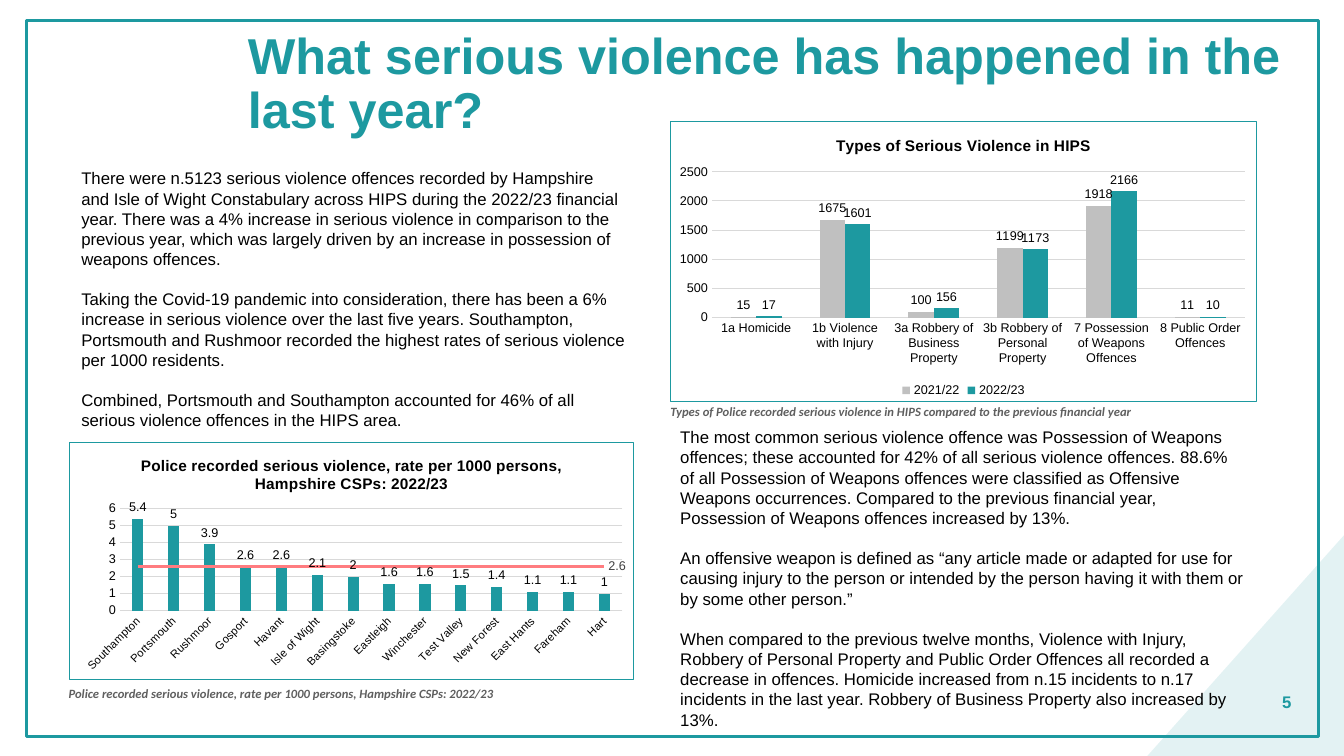
"""Build the serious violence slide with two charts and their commentary."""
from dataclasses import dataclass

from pptx import Presentation, oxml
from pptx import util as u
from pptx.chart import data as cd
from pptx.dml import color
from pptx.enum import chart as ce, shapes, text
from pptx.oxml import ns

COLORS = {"teal": "1D99A0", "black": "000000", "white": "FFFFFF", "grey": "C0C0C0",
          "caption": "5F5F5F", "grid": "D9D9D9", "pink": "FF7C80", "label": "404040"}

@dataclass
class Style:
    size: float
    color: str = "black"
    name: str = "Arial"
    bold: bool = False
    italic: bool = False

@dataclass
class TextBlock:
    frame: tuple[float, float, float, float]
    paragraphs: list[str]
    style: Style
    inset: tuple[float, float] = (7.2, 3.6)
    align: text.PP_ALIGN = text.PP_ALIGN.LEFT
    anchor: text.MSO_ANCHOR = text.MSO_ANCHOR.TOP

@dataclass
class ChartBlock:
    frame: tuple[float, float, float, float]
    title: str
    categories: list[str]
    series: dict[str, list[float]]
    colors: list[str]
    plot_area: tuple[float, float, float, float]
    top: float
    step: float
    gap: int
    overlap: int
    category_size: float

BODY, LABEL = Style(12), Style(9)
CAPTION = Style(9, "caption", "Calibri", True, True)

TEXTS = [
    TextBlock((51, 116.5, 404, 254), [
        "There were n.5123 serious violence offences recorded by Hampshire and Isle of Wight Constabulary across HIPS during the 2022/23 financial year. There was a 4% increase in serious violence in comparison to the previous year, which was largely driven by an increase in possession of weapons offences.",
        "Taking the Covid-19 pandemic into consideration, there has been a 6% increase in serious violence over the last five years. Southampton, Portsmouth and Rushmoor recorded the highest rates of serious violence per 1000 residents.",
        "Combined, Portsmouth and Southampton accounted for 46% of all serious violence offences in the HIPS area."], BODY),
    TextBlock((478.8, 301.5, 419, 269), [
        "The most common serious violence offence was Possession of Weapons offences; these accounted for 42% of all serious violence offences. 88.6% of all Possession of Weapons offences were classified as Offensive Weapons occurrences. Compared to the previous financial year, Possession of Weapons offences increased by 13%.",
        "An offensive weapon is defined as “any article made or adapted for use for causing injury to the person or intended by the person having it with them or by some other person.”",
        "When compared to the previous twelve months, Violence with Injury, Robbery of Personal Property and Public Order Offences all recorded a decrease in offences. Homicide increased from n.15 incidents to n.17 incidents in the last year. Robbery of Business Property also increased by 13%."], BODY),
    TextBlock((49, 489.6, 319, 11), [
        "Police recorded serious violence, rate per 1000 persons, Hampshire CSPs: 2022/23"], CAPTION, (0, 0)),
    TextBlock((478.8, 288.7, 335.5, 11), [
        "Types of Police recorded serious violence in HIPS compared to the previous financial year"], CAPTION, (0, 0)),
    TextBlock((905.8, 486.7, 23.8, 28.8), ["5"], Style(12, "teal", bold=True),
              align=text.PP_ALIGN.RIGHT, anchor=text.MSO_ANCHOR.MIDDLE),
]

RATES = ChartBlock(
    (49, 315.4, 404, 170.6),
    "Police recorded serious violence, rate per 1000 persons, Hampshire CSPs: 2022/23",
    ["Southampton", "Portsmouth", "Rushmoor", "Gosport", "Havant", "Isle of Wight", "Basingstoke",
     "Eastleigh", "Winchester", "Test Valley", "New Forest", "East Hants", "Fareham", "Hart"],
    {"Series 1": [5.4, 5, 3.9, 2.6, 2.6, 2.1, 2, 1.6, 1.6, 1.5, 1.4, 1.1, 1.1, 1], "Series 2": [2.6] * 14},
    ["teal", "pink"], (0.09, 0.28, 0.89, 0.43), 6, 1, 219, -27, 8)

TYPES = ChartBlock(
    (478.8, 86.4, 419, 200.9), "Types of Serious Violence in HIPS",
    ["1a Homicide", "1b Violence with Injury", "3a Robbery of Business Property",
     "3b Robbery of Personal Property", "7 Possession of Weapons Offences", "8 Public Order Offences"],
    {"2021/22": [15, 1675, 100, 1199, 1918, 11], "2022/23": [17, 1601, 156, 1173, 2166, 10]},
    ["grey", "teal"], (0.07, 0.18, 0.91, 0.52), 2500, 500, 150, 0, 9)

def points(values: tuple) -> list:
    return [u.Pt(v) for v in values]

def set_font(font, style: Style) -> None:
    font.size, font.name = u.Pt(style.size), style.name
    font.bold, font.italic = style.bold, style.italic
    font.color.rgb = color.RGBColor.from_string(COLORS[style.color])

def set_fill(fill, name: str) -> None:
    fill.solid()
    fill.fore_color.rgb = color.RGBColor.from_string(COLORS[name])

def set_line(line, name: str, width: float) -> None:
    line.width = u.Pt(width)
    set_fill(line.fill, name)

def add_frame(slide) -> None:
    border = slide.shapes.add_shape(shapes.MSO_SHAPE.RECTANGLE, *points((18.7, 14.4, 923, 512)))
    border.fill.background()
    set_line(border.line, "teal", 2.25)
    corner = slide.shapes.add_shape(shapes.MSO_SHAPE.RIGHT_TRIANGLE, *points((810.9, 390.9, 157.7, 140.5)))
    corner.rotation = 270
    set_fill(corner.fill, "teal")
    tint = next(corner._element.spPr.iter(ns.qn("a:srgbClr")))
    tint.append(oxml.parse_xml(f'<a:alpha {ns.nsdecls("a")} val="12000"/>'))
    corner.line.fill.background()
    border.shadow.inherit = corner.shadow.inherit = False

def add_title(slide) -> None:
    sp = slide.shapes.title
    sp.left, sp.top, sp.width, sp.height = points((169.9, 8.6, 759.6, 104.4))
    tf = sp.text_frame
    tf.text = "What serious violence has happened in the last year?"
    tf.auto_size, tf.vertical_anchor = text.MSO_AUTO_SIZE.NONE, text.MSO_ANCHOR.MIDDLE
    p = tf.paragraphs[0]
    p.alignment, p.line_spacing = text.PP_ALIGN.LEFT, 0.9
    set_font(p.font, Style(36, "teal", bold=True))

def add_text(slide, block: TextBlock) -> None:
    tf = slide.shapes.add_textbox(*points(block.frame)).text_frame
    tf.word_wrap, tf.vertical_anchor = True, block.anchor
    tf.margin_left = tf.margin_right = u.Pt(block.inset[0])
    tf.margin_top = tf.margin_bottom = u.Pt(block.inset[1])
    for i, words in enumerate(block.paragraphs):
        p = tf.add_paragraph() if i else tf.paragraphs[0]
        p.text, p.alignment = words, block.align
        p.space_before = u.Pt(14.4 if i else 0)
        set_font(p.font, block.style)

def add_chart(slide, block: ChartBlock):
    data = cd.CategoryChartData()
    data.categories = block.categories
    for name, values in block.series.items():
        data.add_series(name, values)
    chart = slide.shapes.add_chart(ce.XL_CHART_TYPE.COLUMN_CLUSTERED, *points(block.frame), data).chart
    set_font(chart.font, Style(10))
    chart.has_legend = False
    p = chart.chart_title.text_frame.paragraphs[0]
    p.text = block.title
    set_font(p.font, Style(11, bold=True))
    plot = chart.plots[0]
    plot.gap_width, plot.overlap, plot.vary_by_categories = block.gap, block.overlap, False
    for series, name in zip(plot.series, block.colors):
        set_fill(series.format.fill, name)
        labels = series.data_labels
        labels.show_value, labels.position = True, ce.XL_LABEL_POSITION.OUTSIDE_END
        set_font(labels.font, LABEL)
    for axis, size in ((chart.category_axis, block.category_size), (chart.value_axis, 9)):
        axis.major_tick_mark = axis.minor_tick_mark = ce.XL_TICK_MARK.NONE
        set_font(axis.tick_labels.font, Style(size))
    set_line(chart.category_axis.format.line, "grid", 0.75)
    axis = chart.value_axis
    axis.minimum_scale, axis.maximum_scale, axis.major_unit = 0, block.top, block.step
    axis.format.line.fill.background()
    set_line(axis.major_gridlines.format.line, "grid", 0.75)
    frame = chart._chartSpace.find(ns.qn("c:chart"))
    frame.addnext(oxml.parse_xml(
        f'<c:spPr {ns.nsdecls("c", "a")}><a:solidFill><a:srgbClr val="{COLORS["white"]}"/></a:solidFill>'
        f'<a:ln w="9525"><a:solidFill><a:srgbClr val="{COLORS["teal"]}"/></a:solidFill></a:ln></c:spPr>'))
    area = frame.find(ns.qn("c:plotArea"))
    for old in area.findall(ns.qn("c:layout")):
        area.remove(old)
    sizes = "".join(f'<c:{k} val="{v}"/>' for k, v in zip("xywh", block.plot_area))
    area.insert(0, oxml.parse_xml(
        f'<c:layout {ns.nsdecls("c")}><c:manualLayout><c:layoutTarget val="inner"/>'
        f'<c:xMode val="edge"/><c:yMode val="edge"/>{sizes}</c:manualLayout></c:layout>'))
    return chart

def make_average_line(chart) -> None:
    bars = next(chart._chartSpace.iter(ns.qn("c:barChart")))
    ser = bars.findall(ns.qn("c:ser"))[1]
    for part in [e for tag in ("invertIfNegative", "spPr", "dLbls") for e in ser.findall(ns.qn(f"c:{tag}"))]:
        ser.remove(part)
    axes = "".join(f'<c:axId val="{a.get("val")}"/>' for a in bars.findall(ns.qn("c:axId")))
    lines = oxml.parse_xml(f'<c:lineChart {ns.nsdecls("c")}><c:grouping val="standard"/>'
                           f'<c:varyColors val="0"/><c:marker val="1"/>{axes}</c:lineChart>')
    lines.insert(2, ser)
    bars.addnext(lines)
    series = chart.plots[1].series[0]
    series.smooth, series.marker.style = False, ce.XL_MARKER_STYLE.NONE
    set_line(series.format.line, "pink", 2.25)
    series.data_labels.show_value = False
    label = series.points[len(RATES.categories) - 1].data_label
    set_font(label.font, Style(9, "label"))
    label.position = ce.XL_LABEL_POSITION.RIGHT

def main() -> None:
    prs = Presentation()
    prs.slide_width, prs.slide_height = points((960, 540))
    slide = prs.slides.add_slide(prs.slide_layouts[5])
    add_frame(slide)
    add_title(slide)
    for block in TEXTS:
        add_text(slide, block)
    rates, types = add_chart(slide, RATES), add_chart(slide, TYPES)
    make_average_line(rates)
    next(rates.category_axis._element.iter(ns.qn("a:bodyPr"))).set("rot", "-2700000")
    types.has_legend = True
    types.legend.position, types.legend.include_in_layout = ce.XL_LEGEND_POSITION.BOTTOM, False
    set_font(types.legend.font, LABEL)
    prs.save("out.pptx")

if __name__ == "__main__":
    main()
